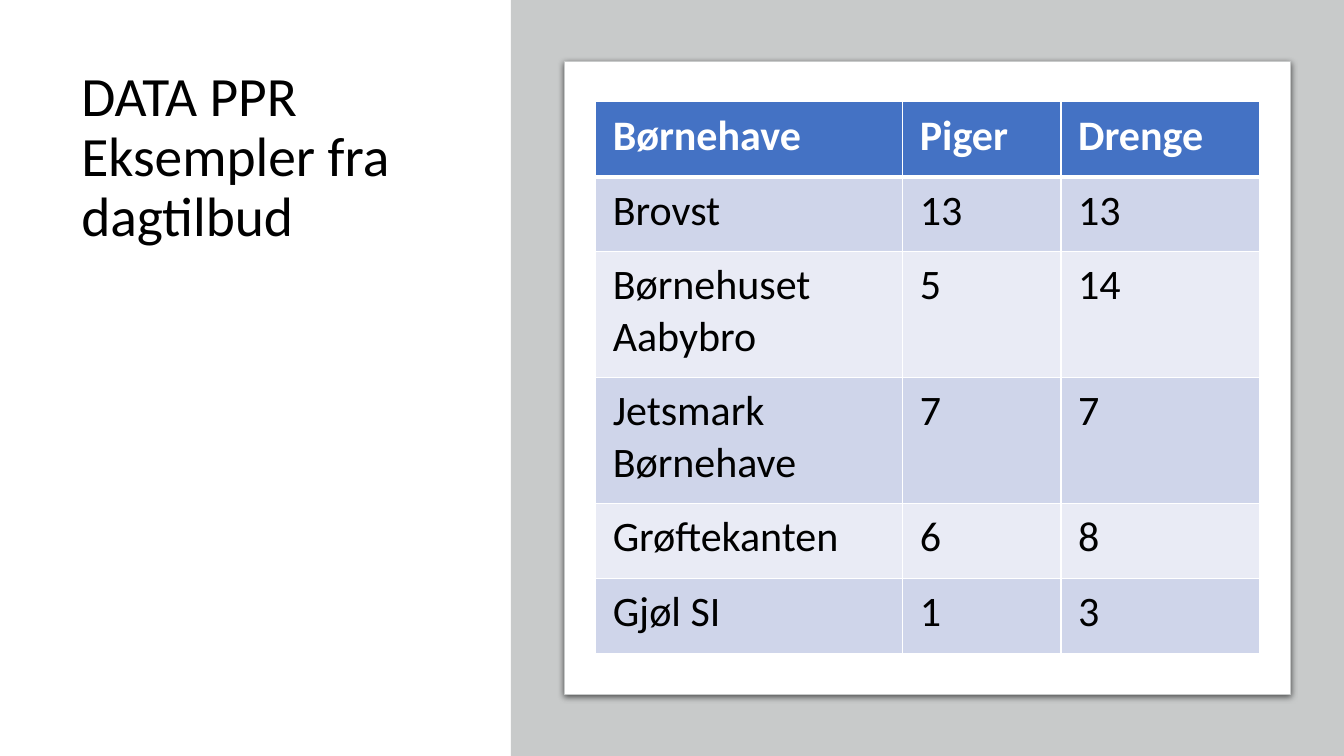
"""Build the slide with kindergarten figures for girls and boys."""
from dataclasses import dataclass

from lxml.etree import SubElement
from pptx import Presentation
from pptx.dml.color import RGBColor
from pptx.enum.shapes import MSO_SHAPE
from pptx.enum.text import MSO_ANCHOR
from pptx.oxml.ns import qn
from pptx.util import Pt

BLACK, WHITE, GREY, BLUE = "000000", "FFFFFF", "C8CACA", "4472C4"
BANDS = ("CFD5EA", "E9EBF5")
COLUMN_WIDTHS = (219.4, 113, 141.6)
LINE_HEIGHTS = {1: 53.5, 2: 90}


@dataclass
class Panel:
    preset: MSO_SHAPE
    left: float
    top: float
    width: float
    height: float
    fill: str
    line: str = ""
    shadow: bool = False


@dataclass
class Kindergarten:
    name: str
    girls: str
    boys: str
    lines: int = 1


PANELS = [
    Panel(MSO_SHAPE.RECTANGLE, 365, 0, 595, 540, GREY),
    Panel(MSO_SHAPE.ROUNDED_RECTANGLE, 403.2, 44, 518.4, 452, WHITE, GREY, True),
]
ROWS = [
    Kindergarten("Børnehave", "Piger", "Drenge"),
    Kindergarten("Brovst", "13", "13"),
    Kindergarten("Børnehuset Aabybro", "5", "14", 2),
    Kindergarten("Jetsmark Børnehave", "7", "7", 2),
    Kindergarten("Grøftekanten", "6", "8"),
    Kindergarten("Gjøl SI", "1", "3"),
]


def rgb(color: str) -> RGBColor:
    return RGBColor.from_string(color)


def write(tf, text: str, *, size: float, color: str = BLACK,
          bold: bool = False, spacing: float = 1.0) -> None:
    tf.word_wrap = True
    p = tf.paragraphs[0]
    p.line_spacing = spacing
    r = p.add_run()
    r.text = text
    r.font.name = "Calibri"
    r.font.size = Pt(size)
    r.font.bold = bold
    r.font.color.rgb = rgb(color)


def add_shadow(sp) -> None:
    shadow = SubElement(sp._element.spPr.find(qn("a:effectLst")), qn("a:outerShdw"),
                        blurRad=str(Pt(4.5)), dist=str(Pt(1.5)), dir="5400000",
                        algn="t", rotWithShape="0")
    color = SubElement(shadow, qn("a:srgbClr"), val=BLACK)
    SubElement(color, qn("a:alpha"), val="63000")


def add_panel(s, panel: Panel) -> None:
    sp = s.shapes.add_shape(panel.preset, Pt(panel.left), Pt(panel.top),
                            Pt(panel.width), Pt(panel.height))
    sp.shadow.inherit = False
    sp.fill.solid()
    sp.fill.fore_color.rgb = rgb(panel.fill)
    if len(sp.adjustments):
        sp.adjustments[0] = 0
    if panel.line:
        sp.line.color.rgb = rgb(panel.line)
        sp.line.width = Pt(0.75)
    else:
        sp.line.fill.background()
    if panel.shadow:
        add_shadow(sp)


def add_borders(cell, top: float, bottom: float) -> None:
    tc_pr = cell._tc.get_or_add_tcPr()
    for side, width in (("L", 1), ("R", 1), ("T", top), ("B", bottom)):
        ln = SubElement(tc_pr, qn(f"a:ln{side}"), w=str(Pt(width)))
        SubElement(SubElement(ln, qn("a:solidFill")), qn("a:srgbClr"), val=WHITE)


def add_figures(s) -> None:
    heights = [LINE_HEIGHTS[row.lines] for row in ROWS]
    table = s.shapes.add_table(len(ROWS), len(COLUMN_WIDTHS), Pt(425.5), Pt(72.7),
                               Pt(sum(COLUMN_WIDTHS)), Pt(sum(heights))).table
    for column, width in zip(table.columns, COLUMN_WIDTHS):
        column.width = Pt(width)
    for i, (row, height) in enumerate(zip(ROWS, heights)):
        table.rows[i].height = Pt(height)
        header = i == 0
        for j, text in enumerate((row.name, row.girls, row.boys)):
            cell = table.cell(i, j)
            cell.margin_left = cell.margin_right = Pt(12.2)
            cell.margin_top = cell.margin_bottom = Pt(6)
            add_borders(cell, top=3 if i == 1 else 1, bottom=3 if header else 1)
            cell.fill.solid()
            cell.fill.fore_color.rgb = rgb(BLUE if header else BANDS[(i - 1) % 2])
            write(cell.text_frame, text, size=30, bold=header,
                  color=WHITE if header else BLACK)


def add_title(s) -> None:
    tf = s.shapes.add_textbox(Pt(51), Pt(49.7), Pt(276), Pt(127.4)).text_frame
    tf.vertical_anchor = MSO_ANCHOR.MIDDLE
    write(tf, "DATA PPR Eksempler fra dagtilbud", size=39.6, spacing=0.9)


def main() -> None:
    prs = Presentation()
    prs.slide_width, prs.slide_height = Pt(960), Pt(540)
    s = prs.slides.add_slide(prs.slide_layouts[6])
    add_title(s)
    for panel in PANELS:
        add_panel(s, panel)
    add_figures(s)
    prs.save("out.pptx")


if __name__ == "__main__":
    main()
